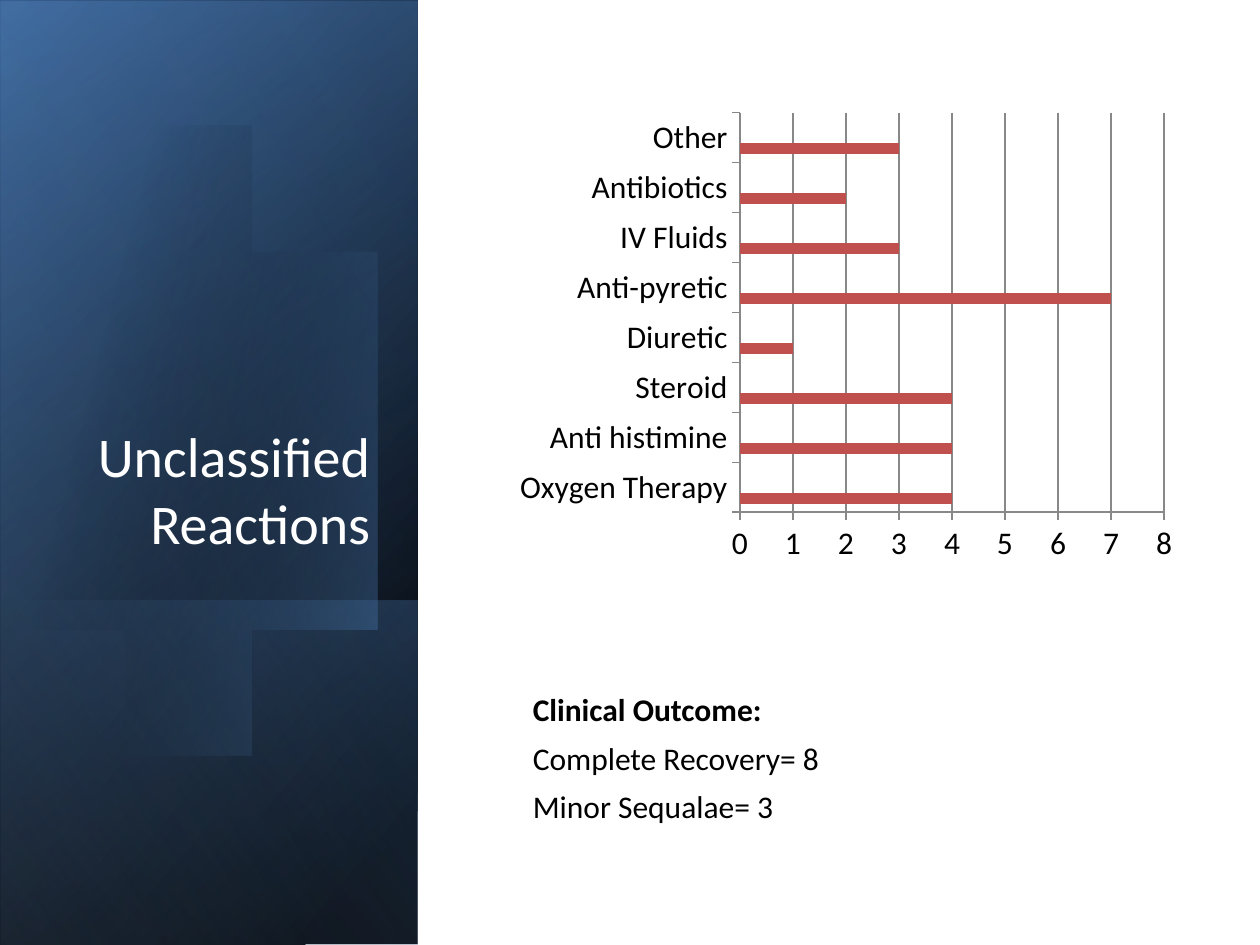
from lxml.etree import SubElement
from pptx import Presentation
from pptx.chart.data import CategoryChartData
from pptx.dml.color import RGBColor
from pptx.enum.chart import XL_CHART_TYPE, XL_TICK_MARK
from pptx.enum.shapes import MSO_SHAPE
from pptx.enum.text import MSO_ANCHOR, PP_ALIGN
from pptx.oxml.ns import qn
from pptx.util import Inches, Pt

COLORS = {
    "black": "000000", "white": "FFFFFF", "navy": "376092", "blue": "4F81BD",
    "pale": "95B3D7", "red": "C0504D", "light": "B4B4B4", "dark": "848484",
    "axis": "888888",
}
RGB = {name: RGBColor.from_string(value) for name, value in COLORS.items()}


def paint_gradient(shape, angle, stops):
    """Fill with two (position, colour, opacity) stops, angle clockwise."""
    shape.shadow.inherit = False
    shape.line.fill.background()
    shape.fill.gradient()
    shape.fill.gradient_angle = (360 - angle) % 360
    for stop, (position, color, _) in zip(shape.fill.gradient_stops, stops):
        stop.position = position / 100
        stop.color.rgb = RGB[color]
    gradient = shape.element.spPr.find(qn("a:gradFill"))
    for node, (_, _, opacity) in zip(gradient.iter(qn("a:srgbClr")), stops):
        if opacity < 100:
            SubElement(node, qn("a:alpha")).set("val", str(opacity * 1000))


def style_font(font, size, color="black", bold=False):
    font.name = "Calibri"
    font.size = Pt(size)
    font.bold = bold
    font.color.rgb = RGB[color]


deck = Presentation()
deck.slide_width, deck.slide_height = Inches(10), Inches(7.5)
page = deck.slides.add_slide(deck.slide_layouts[5])

# Side panel: rectangles turned a quarter, with the oval before the last one
full_panel = (-2.09, 2.09, 7.5, 3.31)
panels = [
    (full_panel, 50, [(8, "black", 100), (100, "navy", 100)]),
    ((-2.09, 2.11, 7.5, 3.31), 30, [(0, "black", 0), (99, "blue", 46)]),
    ((0.29, 4.48, 2.74, 3.31), 130, [(2, "blue", 29), (100, "black", 30)]),
    (full_panel, 120, [(0, "black", 0), (99, "pale", 11)]),
]
panel_shapes = []
for bounds, angle, stops in panels:
    panel = page.shapes.add_shape(MSO_SHAPE.RECTANGLE, *map(Inches, bounds))
    panel.rotation = 90
    panel.element.spPr.xfrm.set("flipH", "1")
    paint_gradient(panel, angle, stops)
    panel_shapes.append(panel)

# Oval cut off at the left: each curve is (control, control, end)
curves = [
    [(1.71, 1.22), (2.44, 1.92), (2.73, 2.9)],
    [(3.07, 4.12), (2.62, 5.31), (1.71, 5.57)],
    [(1.14, 5.74), (0.53, 5.5), (0.07, 5)],
    [(-0.03, 4.88)],
    [(-0.25, 1.66)],
    [(-0.15, 1.54)],
    [(0.02, 1.37), (0.22, 1.25), (0.45, 1.18)],
    [(0.62, 1.13), (0.79, 1.12), (0.96, 1.14)],
]
STEPS = 24
points = [(0.96, 1.14)]
for curve in curves:
    if len(curve) == 1:
        points += curve
        continue
    corners = [points[-1], *curve]
    for step in range(1, STEPS + 1):
        t = step / STEPS
        weights = ((1 - t) ** 3, 3 * t * (1 - t) ** 2, 3 * t * t * (1 - t), t ** 3)
        points.append(tuple(
            sum(weight * corner[axis] for weight, corner in zip(weights, corners))
            for axis in (0, 1)))
builder = page.shapes.build_freeform(*points[0], scale=Inches(1))
builder.add_line_segments(points[1:], close=True)
oval = builder.convert_to_shape()
paint_gradient(oval, 14, [(29, "black", 0), (100, "blue", 43)])
panel_shapes[-1].element.addprevious(oval.element)

# Title, brought in front of the panel
title = page.shapes.title
panel_shapes[-1].element.addnext(title.element)
title.left, title.top, title.width, title.height = map(
    Inches, (0.48, 1.84, 2.56, 2.62))
title.text_frame.text = "Unclassified Reactions"
title.text_frame.word_wrap = True
title.text_frame.vertical_anchor = MSO_ANCHOR.BOTTOM
para = title.text_frame.paragraphs[0]
para.alignment = PP_ALIGN.RIGHT
style_font(para.runs[0].font, 32, "white")

# Treatment chart
treatments = {
    "Oxygen Therapy": 4, "Anti histimine": 4, "Steroid": 4, "Diuretic": 1,
    "Anti-pyretic": 7, "IV Fluids": 3, "Antibiotics": 2, "Other": 3,
}
data = CategoryChartData()
data.categories = list(treatments)
data.add_series("Series 1", list(treatments.values()))
for name in ("Series 2", "Series 3"):
    data.add_series(name, [None] * len(treatments))
chart = page.shapes.add_chart(
    XL_CHART_TYPE.BAR_CLUSTERED, *map(Inches, (4.02, 0.82, 5.39, 3.72)), data).chart
chart.has_legend = False
chart.has_title = False
style_font(chart.font, 18)
plot = chart.plots[0]
plot.gap_width = 150
plot.vary_by_categories = False
for series, color in zip(plot.series, ("red", "light", "dark")):
    series.format.fill.solid()
    series.format.fill.fore_color.rgb = RGB[color]

value_axis = chart.value_axis
value_axis.has_major_gridlines = True
value_axis.minimum_scale, value_axis.maximum_scale = 0, 8
value_axis.major_unit = 1
for axis in (chart.category_axis, value_axis):
    axis.major_tick_mark = XL_TICK_MARK.OUTSIDE
    axis.minor_tick_mark = XL_TICK_MARK.NONE
    style_font(axis.tick_labels.font, 18)
for part in (chart.category_axis, value_axis, value_axis.major_gridlines):
    part.format.line.color.rgb = RGB["axis"]
    part.format.line.width = Pt(0.75)

# Clinical outcome
box = page.shapes.add_textbox(*map(Inches, (4.13, 5.43, 2.91, 1.18)))
box.text_frame.word_wrap = True
box.text_frame.text = "Clinical Outcome:\nComplete Recovery= 8\nMinor Sequalae= 3"
for index, para in enumerate(box.text_frame.paragraphs):
    para.space_after = Pt(6)
    style_font(para.runs[0].font, 18, bold=index == 0)

deck.save("out.pptx")
